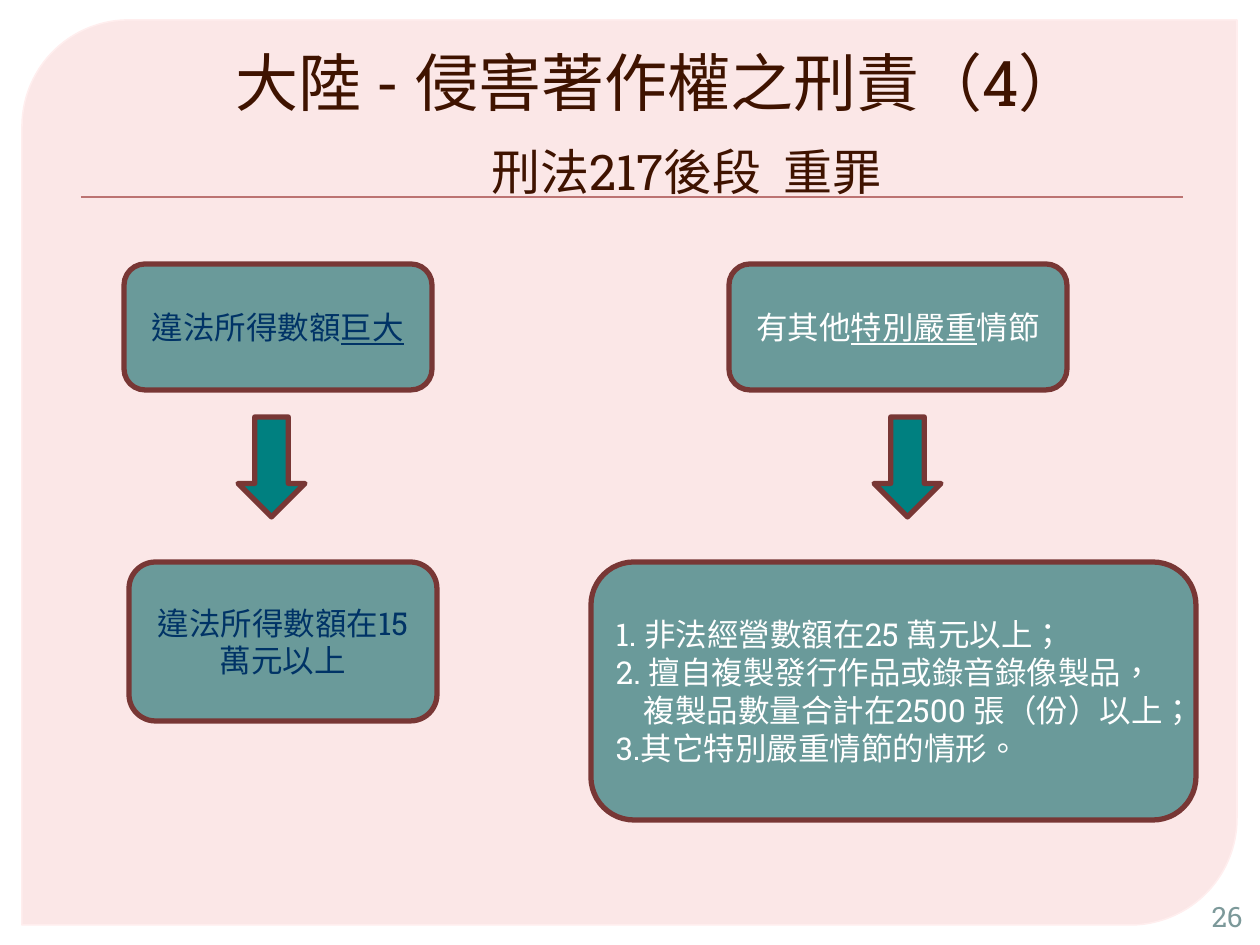
from pptx import Presentation
from pptx import util as u
from pptx.dml.color import RGBColor
from pptx.enum import shapes, text
from pptx.oxml.ns import qn
from lxml import etree

PX = 914400 / 126
FONT = "Roboto Slab"
COLORS = {
    "panel": "FBE7E7", "panel_edge": "FFEEEE", "rule": "BC7372",
    "title": "3F1300", "box": "6A9A9A", "edge": "783735",
    "arrow": "008080", "navy": "003366", "white": "FFFFFF", "number": "7C999A",
}
KINDS = shapes.MSO_SHAPE
ALIGN = text.PP_ALIGN
ANCHOR = text.MSO_ANCHOR


def px(length):
    """Turn pixels into EMU."""
    return u.Emu(round(length * PX))


def color(name):
    """Look up a colour by name."""
    return RGBColor.from_string(COLORS[name])


def set_values(target, values):
    """Set attributes from a dict."""
    for name, value in values.items():
        setattr(target, name, value)


def add_figure(page, kind, place, fill, edge="edge", width=3):
    """Add a filled preset shape with an outline."""
    shape = page.shapes.add_shape(kind, *map(px, place))
    shape.shadow.inherit = False
    shape.fill.solid()
    shape.fill.fore_color.rgb = color(fill)
    shape.line.color.rgb = color(edge)
    shape.line.width = u.Pt(width)
    return shape


def write(box, paragraphs, ink, size=18, align=ALIGN.CENTER, anchor=ANCHOR.MIDDLE):
    """Fill a box with paragraphs of (words, underlined) spans."""
    frame = box.text_frame
    set_values(frame, {"word_wrap": True, "vertical_anchor": anchor})
    for index, spans in enumerate(paragraphs):
        para = frame.add_paragraph() if index else frame.paragraphs[0]
        para.alignment = align
        for words, underlined in spans:
            span = para.add_run()
            span.text = words
            set_values(span.font, {"name": FONT, "size": u.Pt(size), "underline": underlined})
            span.font.color.rgb = color(ink)
            span._r.get_or_add_rPr().set("lang", "zh-TW")
    return frame.paragraphs


def indent(para, **lengths):
    """Set paragraph margins in pixels."""
    for name, length in lengths.items():
        para._p.get_or_add_pPr().set(name, str(px(length)))


def add_rule(page, left, right, y):
    """Draw the thin line under the title."""
    rule = page.shapes.add_connector(
        shapes.MSO_CONNECTOR.STRAIGHT, px(left), px(y), px(right), px(y))
    rule.line.color.rgb = color("rule")
    rule.line.width = u.Pt(1)
    etree.SubElement(rule._element.spPr, qn("a:effectLst"))


def add_title(page):
    """Add the two-line heading."""
    box = page.shapes.add_textbox(*map(px, (25, 21, 1235, 186)))
    lines = [[("大陸 - 侵害著作權之刑責（4）", False)], [("刑法217後段  重罪", False)]]
    heading, subheading = write(box, lines, "title", 36, anchor=ANCHOR.BOTTOM)
    indent(heading, marL=32)
    indent(subheading, marL=88)
    subheading.space_before = u.Pt(13)
    subheading.runs[0].font.size = u.Pt(28)


def add_box(page, place, paragraphs, ink, align=ALIGN.CENTER):
    """Add a rounded box with text."""
    shape = add_figure(page, KINDS.ROUNDED_RECTANGLE, place, "box")
    return write(shape, paragraphs, ink, align=align)


def main():
    """Build the slide."""
    deck = Presentation()
    set_values(deck, {"slide_width": px(1260), "slide_height": px(945)})
    page = deck.slides.add_slide(deck.slide_layouts[6])

    panel = add_figure(page, KINDS.ROUND_2_DIAG_RECTANGLE, (22, 20, 1215, 905),
                       "panel", "panel_edge", 0.87)
    panel.adjustments[0] = 0.118
    add_rule(page, 81, 1183, 197)
    add_title(page)

    add_box(page, (124, 264, 308, 126), [[("違法所得數額", False), ("巨大", True)]], "navy")
    add_box(page, (729, 264, 338, 126),
            [[("有其他", False), ("特別嚴重", True), ("情節", False)]], "white")
    for left in (238, 874):
        add_figure(page, KINDS.DOWN_ARROW, (left, 417, 67, 100), "arrow")
    add_box(page, (129, 562, 308, 159), [[("違法所得數額在15萬元以上", False)]], "navy")

    conditions = (
        "1. 非法經營數額在25 萬元以上；",
        "2. 擅自複製發行作品或錄音錄像製品，",
        "複製品數量合計在2500 張（份）以上；",
        "3.其它特別嚴重情節的情形。",
    )
    lines = add_box(page, (591, 562, 605, 258),
                    [[(words, False)] for words in conditions], "white", ALIGN.LEFT)
    indent(lines[2], marL=0, indent=28)

    number = page.shapes.add_textbox(*map(px, (1191, 897, 64, 38)))
    write(number, [[("26", False)]], "number", 16, ALIGN.RIGHT)
    deck.save("out.pptx")


if __name__ == "__main__":
    main()
